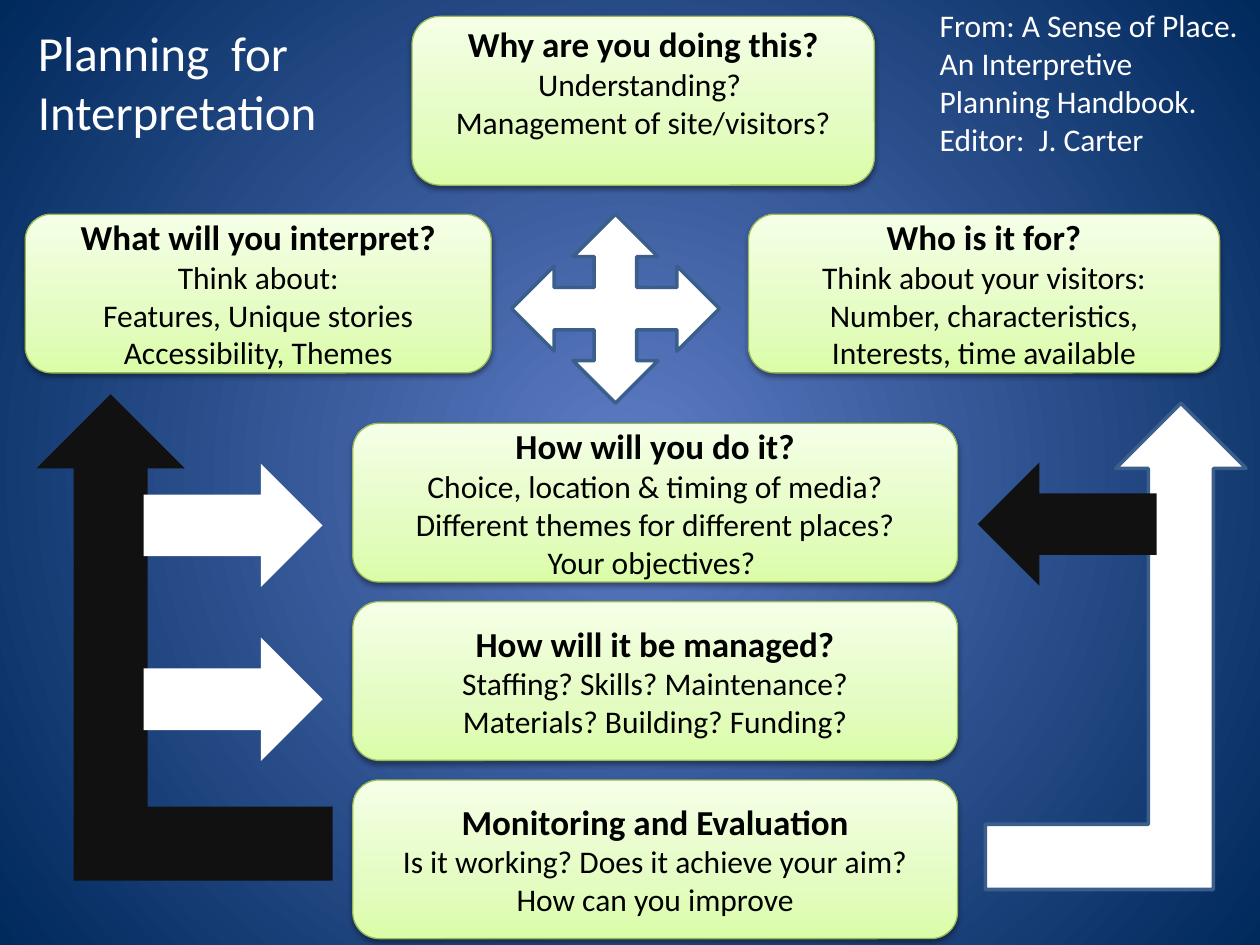
import pptx
import pptx.util
import pptx.dml.color
import pptx.enum.shapes
import pptx.enum.text
import pptx.oxml
import pptx.oxml.ns
from dataclasses import dataclass

SHAPE = pptx.enum.shapes.MSO_SHAPE
ALIGN = pptx.enum.text.PP_ALIGN
ANCHOR = pptx.enum.text.MSO_ANCHOR
COLUMNS, ROWS = 100, 75
SLIDE_WIDTH, SLIDE_HEIGHT = pptx.util.Inches(10), pptx.util.Inches(7.5)
NS = pptx.oxml.ns.nsdecls("a")


@dataclass(frozen=True)
class Theme:
    font: str = "Calibri"
    title_size: int = 28
    heading_size: int = 20
    body_size: int = 18
    light: str = "FFFFFF"
    dark: str = "111111"
    ink: str = "000000"
    arrow_edge: str = "3A5F8C"
    card_edge: str = "98B955"
    card_stops: tuple = ((0, "DAFDA7"), (35, "E4FCC2"), (100, "F5FFE7"))
    backdrop_stops: tuple = ((0, "5E7CC5"), (100, "00295C"))


THEME = Theme()


@dataclass(frozen=True)
class Box:
    column: float
    row: float
    columns: float
    rows: float

    def inner(self, column, row, columns, rows):
        return Box(self.column + column, self.row + row, columns, rows)

    def lengths(self):
        return (
            int(SLIDE_WIDTH * self.column / COLUMNS),
            int(SLIDE_HEIGHT * self.row / ROWS),
            int(SLIDE_WIDTH * self.columns / COLUMNS),
            int(SLIDE_HEIGHT * self.rows / ROWS),
        )


def rgb(value):
    return pptx.dml.color.RGBColor.from_string(value)


def gradient(stops, direction):
    marks = "".join(
        f'<a:gs pos="{share * 1000}"><a:srgbClr val="{color}"/></a:gs>'
        for share, color in stops
    )
    return pptx.oxml.parse_xml(
        f'<a:gradFill {NS} rotWithShape="1"><a:gsLst>{marks}</a:gsLst>{direction}</a:gradFill>'
    )


def paint_backdrop(slide):
    slide.background.fill.solid()
    solid = slide.element.find(".//" + pptx.oxml.ns.qn("p:bgPr")).find(pptx.oxml.ns.qn("a:solidFill"))
    center = '<a:path path="circle"><a:fillToRect l="50000" t="50000" r="50000" b="50000"/></a:path>'
    solid.getparent().replace(solid, gradient(THEME.backdrop_stops, center))


def write(frame, lines, sizes, color, align):
    frame.word_wrap = True
    frame.text = "\n".join(lines)
    for paragraph, size in zip(frame.paragraphs, sizes):
        paragraph.alignment = align
        paragraph.font.name = THEME.font
        paragraph.font.size = pptx.util.Pt(size)
        paragraph.font.color.rgb = rgb(color)


def add_card(slide, box, heading, *details, bottom=0.05):
    card = slide.shapes.add_shape(SHAPE.ROUNDED_RECTANGLE, *box.lengths())
    card.fill.solid()
    card.line.color.rgb = rgb(THEME.card_edge)
    card.line.width = pptx.util.Pt(0.75)
    card.shadow.inherit = False
    properties = card.element.spPr
    solid = properties.find(pptx.oxml.ns.qn("a:solidFill"))
    properties.replace(solid, gradient(THEME.card_stops, '<a:lin ang="16200000" scaled="0"/>'))
    properties.find(pptx.oxml.ns.qn("a:effectLst")).append(pptx.oxml.parse_xml(
        f'<a:outerShdw {NS} blurRad="40000" dist="20000" dir="5400000" rotWithShape="0">'
        f'<a:srgbClr val="{THEME.ink}"><a:alpha val="38000"/></a:srgbClr></a:outerShdw>'
    ))
    frame = card.text_frame
    frame.vertical_anchor = ANCHOR.MIDDLE
    frame.margin_bottom = pptx.util.Inches(bottom)
    sizes = [THEME.heading_size] + [THEME.body_size] * len(details)
    write(frame, [heading, *details], sizes, THEME.ink, ALIGN.CENTER)
    frame.paragraphs[0].font.bold = True


def add_arrow(slide, kind, box, color, edge=None, mirrored=False):
    arrow = slide.shapes.add_shape(kind, *box.lengths())
    arrow.shadow.inherit = False
    arrow.fill.solid()
    arrow.fill.fore_color.rgb = rgb(color)
    if edge:
        arrow.line.color.rgb = rgb(edge)
        arrow.line.width = pptx.util.Pt(2)
    else:
        arrow.line.fill.background()
    if mirrored:
        arrow.element.spPr.find(pptx.oxml.ns.qn("a:xfrm")).set("flipH", "1")


def add_header(slide, box):
    title = slide.shapes.title
    title.left, title.top, title.width, title.height = box.inner(2, 1.3, 28.3, 10.4).lengths()
    title.text_frame.vertical_anchor = ANCHOR.TOP
    write(title.text_frame, ["Planning  for  Interpretation"], [THEME.title_size],
          THEME.light, ALIGN.LEFT)
    add_card(slide, box.inner(32.7, 1.3, 36.7, 13.4), "Why are you doing this?",
             "Understanding? ", "Management of site/visitors?", bottom=0.35)
    credit = slide.shapes.add_textbox(*box.inner(73.6, 0, 26.2, 13.1).lengths())
    lines = ["From: A Sense of Place.", "An Interpretive Planning Handbook.", "Editor:  J. Carter"]
    write(credit.text_frame, lines, [THEME.body_size] * len(lines), THEME.light, ALIGN.LEFT)


def add_subject_and_audience(slide, box):
    add_card(slide, box.inner(0, 0, 37, box.rows), "What will you interpret?",
             "Think about:", "Features, Unique stories", "Accessibility, Themes")
    add_card(slide, box.inner(57.4, 0, 37.4, box.rows), "Who is it for?",
             "Think about your visitors:", "Number, characteristics,", "Interests, time available")
    add_arrow(slide, SHAPE.QUAD_ARROW, box.inner(38.6, 0, 16.5, 15), THEME.light, THEME.arrow_edge)


def add_steps(slide, box):
    steps = [
        ("How will you do it?", "Choice, location & timing of media?",
         "Different themes for different places?", "Your objectives? "),
        ("How will it be managed?", "Staffing? Skills? Maintenance?",
         "Materials? Building? Funding?"),
        ("Monitoring and Evaluation", "Is it working? Does it achieve your aim?",
         "How can you improve"),
    ]
    height = 12.6
    pitch = (box.rows - height) / (len(steps) - 1)
    for index, step in enumerate(steps):
        add_card(slide, box.inner(0, index * pitch, box.columns, height), *step)


def add_feedback(slide, box, stem, edge, branch, branch_column, branch_rows, on_left):
    add_arrow(slide, SHAPE.BENT_UP_ARROW, box, stem, edge, mirrored=on_left)
    for row in branch_rows:
        add_arrow(slide, SHAPE.RIGHT_ARROW, box.inner(branch_column, row, 14.2, 9.8),
                  branch, mirrored=not on_left)


def main():
    deck = pptx.Presentation()
    deck.slide_width, deck.slide_height = SLIDE_WIDTH, SLIDE_HEIGHT
    slide = deck.slides.add_slide(deck.slide_layouts.get_by_name("Title Only"))
    paint_backdrop(slide)
    add_header(slide, Box(0, 0, COLUMNS, 14.7))
    add_subject_and_audience(slide, Box(2, 17, 94.8, 12.6))
    add_steps(slide, Box(28, 33.6, 48, 40.9))
    add_feedback(slide, Box(78.2, 32, 20.7, 38.6), THEME.light, THEME.arrow_edge,
                 THEME.dark, -0.6, [4.7], on_left=False)
    add_feedback(slide, Box(2.9, 31.3, 23.5, 38.6), THEME.dark, None,
                 THEME.light, 8.5, [5.5, 19.3], on_left=True)
    deck.save("out.pptx")


if __name__ == "__main__":
    main()
